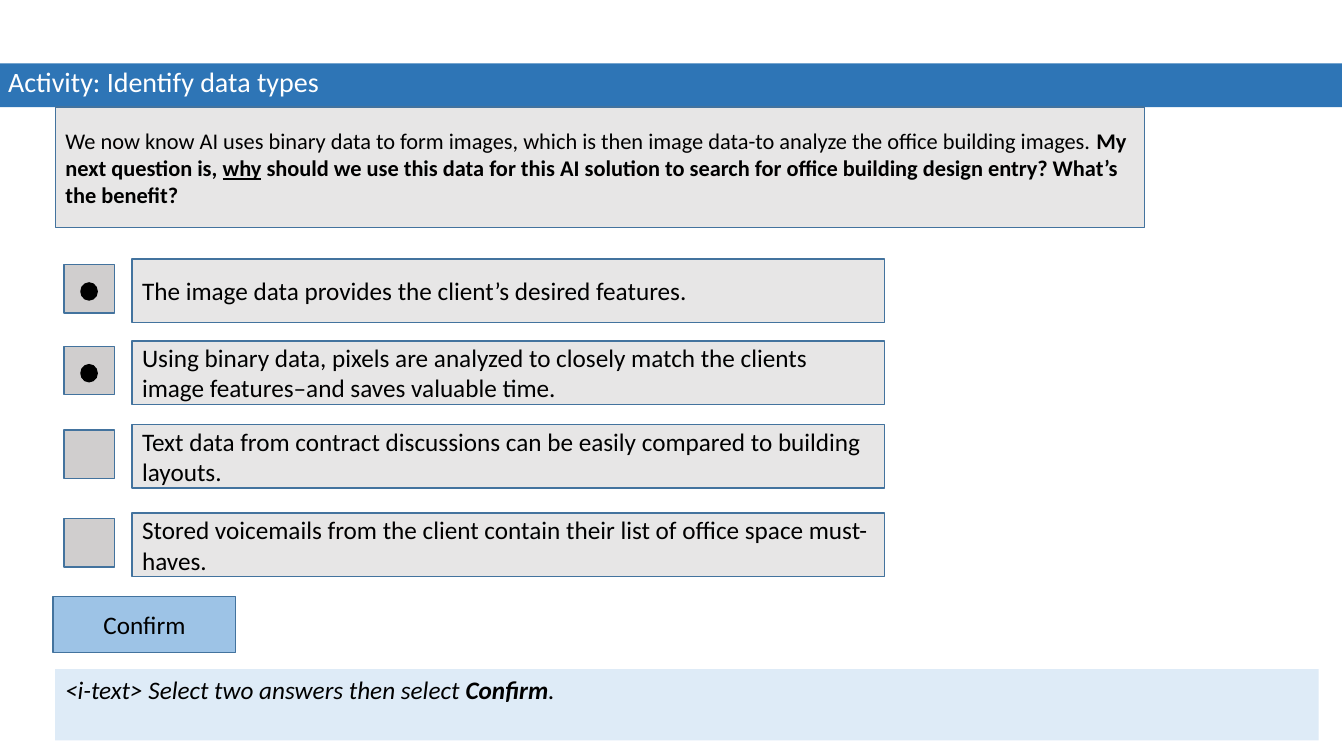
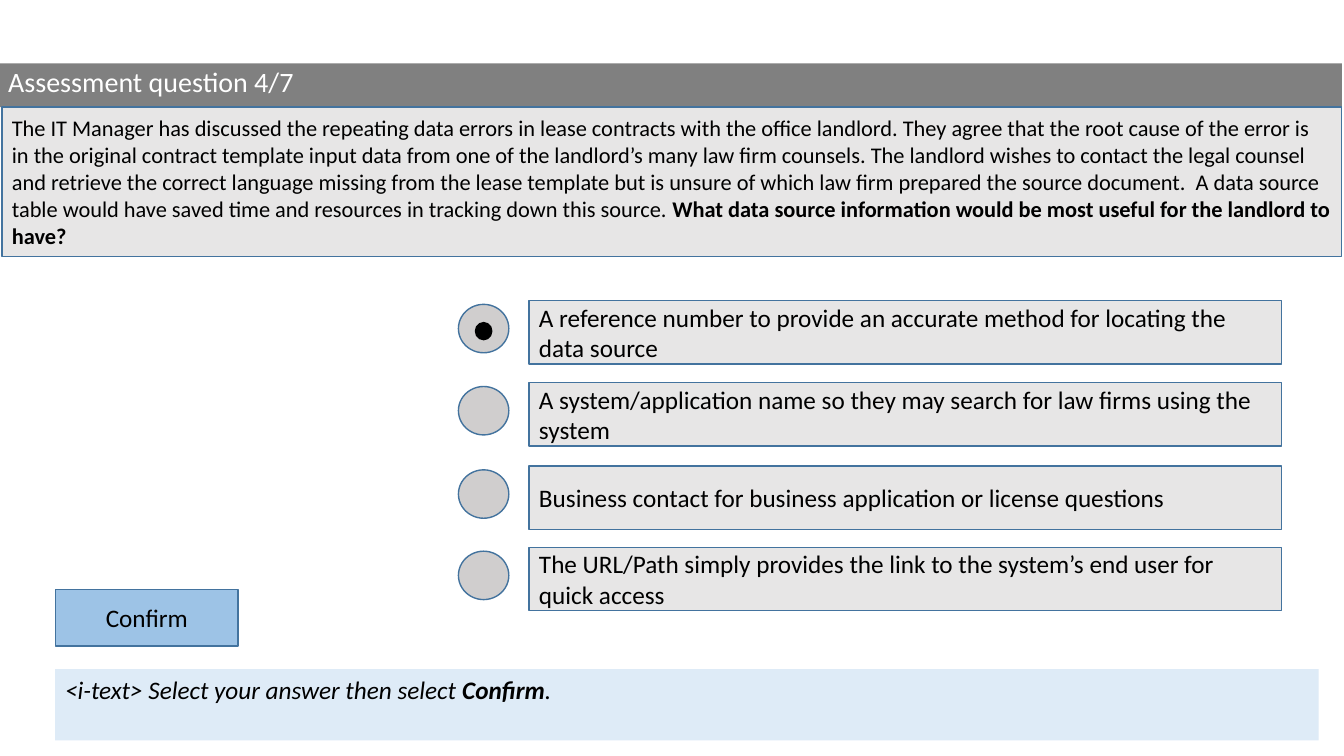
from dataclasses import dataclass

from pptx import Presentation
from pptx.dml.color import RGBColor
from pptx.enum.shapes import MSO_SHAPE as Shape
from pptx.enum.text import MSO_ANCHOR as Anchor, MSO_AUTO_SIZE as AutoSize, PP_ALIGN as Align
from pptx.util import Cm, Pt


@dataclass(frozen=True)
class Theme:
    font: str = "Calibri"
    title_size: int = 20
    body_size: int = 18
    question_size: int = 16
    ink: str = "000000"
    title_ink: str = "FFFFFF"
    activity: str = "2E75B6"
    assessment: str = "808080"
    panel: str = "E7E6E6"
    marker: str = "D0CECE"
    button: str = "9DC3E6"
    hint: str = "DEEBF7"
    outline: str = "43739E"


THEME = Theme()
SLIDE_W, SLIDE_H = 33.86, 19.05
BAND = (-0.05, 1.6, SLIDE_W, 1.1)
HINT = (1.39, 16.86, 31.83, 1.8)
BUTTON_W, BUTTON_H = 4.6, 1.42
OPTION_W, OPTION_H = 18.95, 1.6
MARKER_W, MARKER_H = 1.27, 1.22
DOT_W, DOT_H = 0.41, 0.43
DOT_LEFT, DOT_TOP = 0.43, 0.46

BOLD = {"bold": True}
ITALIC = {"italic": True}
BOLD_ITALIC = BOLD | ITALIC

SCREENS = [
    {
        "title": "Activity: Identify data types",
        "band": THEME.activity,
        "question_box": (1.4, 2.7, 27.43, 3.04),
        "question": [
            ("We now know AI uses binary data to form images, which is then image data-to "
             "analyze the office building images. ", {}),
            ("My next question is, ", BOLD),
            ("why", BOLD | {"underline": True}),
            (" should we use this data for this AI solution to search for office building "
             "design entry? What’s the benefit?", BOLD),
        ],
        "marker": Shape.RECTANGLE,
        "marker_offset": (-1.72, 0.14),
        "options_left": 3.33,
        "options": [
            (6.53, "The image data provides the client’s desired features.", True),
            (8.59, "Using binary data, pixels are analyzed to closely match the clients "
                   "image features–and saves valuable time.", True),
            (10.7, "Text data from contract discussions can be easily compared to "
                   "building layouts.", False),
            (12.93, "Stored voicemails from the client contain their list of office space "
                    "must-haves.", False),
        ],
        "button_at": (1.34, 15.03),
        "hint": "<i-text> Select two answers then select ",
    },
    {
        "title": "Assessment question 4/7",
        "band": THEME.assessment,
        "question_box": (0.05, 2.7, 33.75, 3.76),
        "question": [
            ("The IT Manager has discussed the repeating data errors in lease contracts with "
             "the office landlord. They agree that the root cause of the error is in the "
             "original contract template input data from one of the landlord’s many law firm "
             "counsels. The landlord wishes to contact the legal counsel and retrieve the "
             "correct language missing from the lease template but is unsure of which law "
             "firm prepared the source document.  A data source table would have saved time "
             "and resources in tracking down this source. ", {}),
            ("What data source information would be most useful for the landlord to have?",
             BOLD),
        ],
        "marker": Shape.OVAL,
        "marker_offset": (-1.78, 0.1),
        "options_left": 13.33,
        "options": [
            (7.57, "A reference number to provide an accurate method for locating the data "
                   "source", True),
            (9.64, "A system/application name so they may search for law firms using the "
                   "system", False),
            (11.74, "Business contact for business application or license questions", False),
            (13.79, "The URL/Path simply provides the link to the system’s end user for "
                    "quick access", False),
        ],
        "button_at": (1.4, 14.86),
        "hint": "<i-text> Select your answer then select ",
    },
]


def write(shape, runs, size, color=THEME.ink, **paragraph_format):
    """Fill the first paragraph of a shape with formatted runs."""
    paragraph = shape.text_frame.paragraphs[0]
    for name, value in ({"alignment": Align.LEFT} | paragraph_format).items():
        setattr(paragraph, name, value)
    for text, emphasis in runs:
        run = paragraph.add_run()
        run.text = text
        run.font.color.rgb = RGBColor.from_string(color)
        for name, value in ({"name": THEME.font, "size": Pt(size)} | emphasis).items():
            setattr(run.font, name, value)


def add_block(slide, box, fill, outline=None, kind=Shape.RECTANGLE, anchor=Anchor.MIDDLE):
    """Add a flat filled shape in a box given in centimetres."""
    block = slide.shapes.add_shape(kind, *map(Cm, box))
    block.shadow.inherit = False
    block.fill.solid()
    block.fill.fore_color.rgb = RGBColor.from_string(fill)
    if outline:
        block.line.color.rgb = RGBColor.from_string(outline)
        block.line.width = Pt(1)
    else:
        block.line.fill.background()
    block.text_frame.word_wrap = True
    block.text_frame.vertical_anchor = anchor
    return block


def place_title(slide, text, fill):
    title = slide.shapes.title
    for name, value in zip(("left", "top", "width", "height"), BAND):
        setattr(title, name, Cm(value))
    title.fill.solid()
    title.fill.fore_color.rgb = RGBColor.from_string(fill)
    frame_format = {"vertical_anchor": Anchor.TOP, "auto_size": AutoSize.NONE,
                    "word_wrap": True}
    for name, value in frame_format.items():
        setattr(title.text_frame, name, value)
    write(title, [(text, {})], THEME.title_size, THEME.title_ink, line_spacing=0.9)


def add_question(slide, box, runs):
    write(add_block(slide, box, THEME.panel, THEME.outline), runs, THEME.question_size)


def add_option(slide, left, top, text, selected, marker_kind, marker_offset):
    # Answer box
    answer = add_block(slide, (left, top, OPTION_W, OPTION_H), THEME.panel, THEME.outline)
    write(answer, [(text, {})], THEME.body_size)
    # Marker, with a dot when selected
    marker_left, marker_top = left + marker_offset[0], top + marker_offset[1]
    add_block(slide, (marker_left, marker_top, MARKER_W, MARKER_H),
              THEME.marker, THEME.outline, marker_kind)
    if selected:
        add_block(slide, (marker_left + DOT_LEFT, marker_top + DOT_TOP, DOT_W, DOT_H),
                  THEME.ink, THEME.ink, Shape.OVAL)


def add_button(slide, left, top):
    button = add_block(slide, (left, top, BUTTON_W, BUTTON_H), THEME.button, THEME.outline)
    write(button, [("Confirm", {})], THEME.body_size, alignment=Align.CENTER)


def add_hint(slide, text):
    hint = add_block(slide, HINT, THEME.hint, anchor=Anchor.TOP)
    write(hint, [(text, ITALIC), ("Confirm", BOLD_ITALIC), (".", ITALIC)], THEME.body_size)


def build_screen(deck, screen):
    slide = deck.slides.add_slide(deck.slide_layouts[5])
    place_title(slide, screen["title"], screen["band"])
    add_question(slide, screen["question_box"], screen["question"])
    for top, text, selected in screen["options"]:
        add_option(slide, screen["options_left"], top, text, selected,
                   screen["marker"], screen["marker_offset"])
    add_button(slide, *screen["button_at"])
    add_hint(slide, screen["hint"])


def main():
    deck = Presentation()
    deck.slide_width, deck.slide_height = Cm(SLIDE_W), Cm(SLIDE_H)
    for screen in SCREENS:
        build_screen(deck, screen)
    deck.save("out.pptx")


if __name__ == "__main__":
    main()
